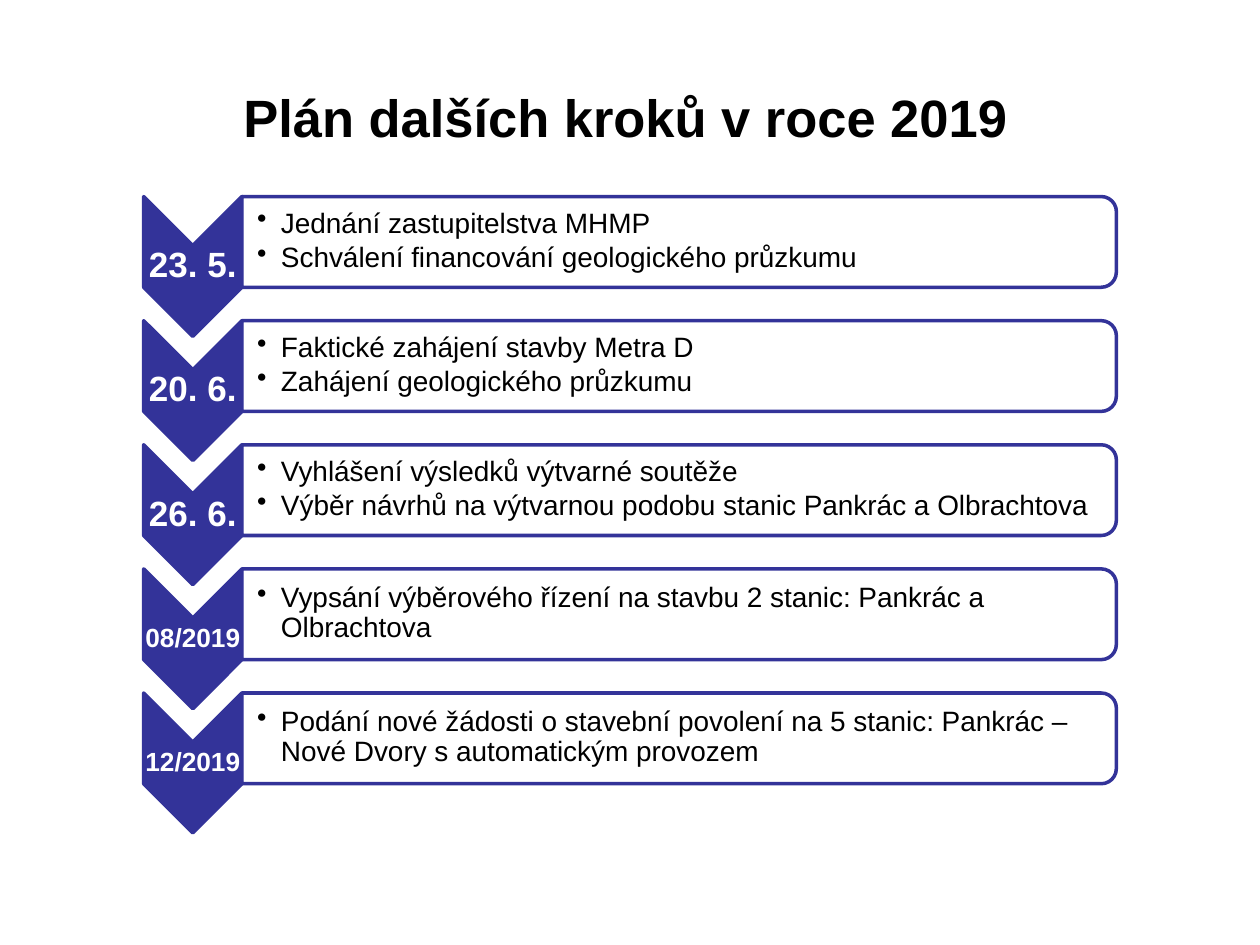
from lxml.etree import SubElement
from pptx import Presentation
from pptx.dml.color import RGBColor
from pptx.enum.shapes import MSO_SHAPE
from pptx.enum.text import MSO_ANCHOR, PP_ALIGN
from pptx.oxml.ns import qn
from pptx.util import Inches, Pt

BLUE, WHITE, BLACK = "333399", "FFFFFF", "000000"
STEPS = [
    ("23. 5.", 20, ["Jednání zastupitelstva MHMP",
                    "Schválení financování geologického průzkumu"]),
    ("20. 6.", 20, ["Faktické zahájení stavby Metra D",
                    "Zahájení geologického průzkumu"]),
    ("26. 6.", 20, ["Vyhlášení výsledků výtvarné soutěže",
                    "Výběr návrhů na výtvarnou podobu stanic Pankrác a Olbrachtova"]),
    ("08/2019", 15, ["Vypsání výběrového řízení na stavbu 2 stanic: Pankrác a Olbrachtova"]),
    ("12/2019", 15, ["Podání nové žádosti o stavební povolení na 5 stanic: "
                     "Pankrác – Nové Dvory s automatickým provozem"]),
]


def rgb(value):
    return RGBColor.from_string(value)


def add_text(s, x, y, w, h, lines, size, color, bold=False, align=PP_ALIGN.CENTER,
             inset=0.01, left=0.01, spacing=1.0, after=0, bullet=False):
    tf = s.shapes.add_textbox(Inches(x), Inches(y), Inches(w), Inches(h)).text_frame
    tf.word_wrap = True
    tf.vertical_anchor = MSO_ANCHOR.MIDDLE
    tf.margin_left = Inches(left)
    tf.margin_top = tf.margin_right = tf.margin_bottom = Inches(inset)
    for i, line in enumerate(lines):
        p = tf.paragraphs[0] if i == 0 else tf.add_paragraph()
        p.text = line
        p.alignment = align
        p.line_spacing = spacing
        p.space_after = Pt(after)
        if bullet:
            pPr = p._p.get_or_add_pPr()
            pPr.set("marL", str(Inches(0.19)))
            pPr.set("indent", str(-Inches(0.19)))
            SubElement(pPr, qn("a:buChar")).set("char", "•")
        font = p.runs[0].font
        font.name, font.size, font.bold = "Arial", Pt(size), bold
        font.color.rgb = rgb(color)


def add_turned(s, kind, x, y, w, h, fill):
    sp = s.shapes.add_shape(kind, Inches(x + (w - h) / 2), Inches(y + (h - w) / 2),
                            Inches(h), Inches(w))
    sp.rotation = 90
    sp.shadow.inherit = False
    sp.fill.solid()
    sp.fill.fore_color.rgb = rgb(fill)
    sp.line.color.rgb = rgb(BLUE)
    sp.line.width = Pt(2)
    return sp


def add_title(s, x, y, w, h):
    add_text(s, x, y, w, h, ["Plán dalších kroků v roce 2019 "], 30, BLACK, True,
             inset=0.05, left=0.1)


def add_step(s, x, y, w, h, date, size, items):
    arrow_w, panel_h = 0.78, 0.72
    add_turned(s, MSO_SHAPE.CHEVRON, x, y, arrow_w, h, BLUE)
    add_text(s, x, y + (h - 0.33) / 2, arrow_w, 0.33, [date], size, WHITE, True,
             spacing=0.9)
    panel_x, panel_w = x + arrow_w, w - arrow_w
    panel = add_turned(s, MSO_SHAPE.ROUND_2_SAME_RECTANGLE, panel_x, y, panel_w,
                       panel_h, WHITE)
    color = panel._element.spPr.find(qn("a:solidFill"))[0]
    SubElement(color, qn("a:alpha")).set("val", "90000")
    add_text(s, panel_x, y + 0.03, panel_w - 0.04, 0.65, items, 16, BLACK,
             align=PP_ALIGN.LEFT, left=0.12, spacing=0.9, after=2.4, bullet=True)


def add_steps(s, x, y, w, h):
    step_h = 1.11
    pitch = (h - step_h) / (len(STEPS) - 1)
    for i, (date, size, items) in enumerate(STEPS):
        add_step(s, x, y + i * pitch, w, step_h, date, size, items)


def main():
    prs = Presentation()
    prs.slide_width, prs.slide_height = Inches(10), Inches(7.5)
    s = prs.slides.add_slide(prs.slide_layouts[6])
    add_title(s, 0.5, 0.3, 9, 1.25)
    add_steps(s, 1.14, 1.56, 7.72, 5.05)
    prs.save("out.pptx")


if __name__ == "__main__":
    main()
